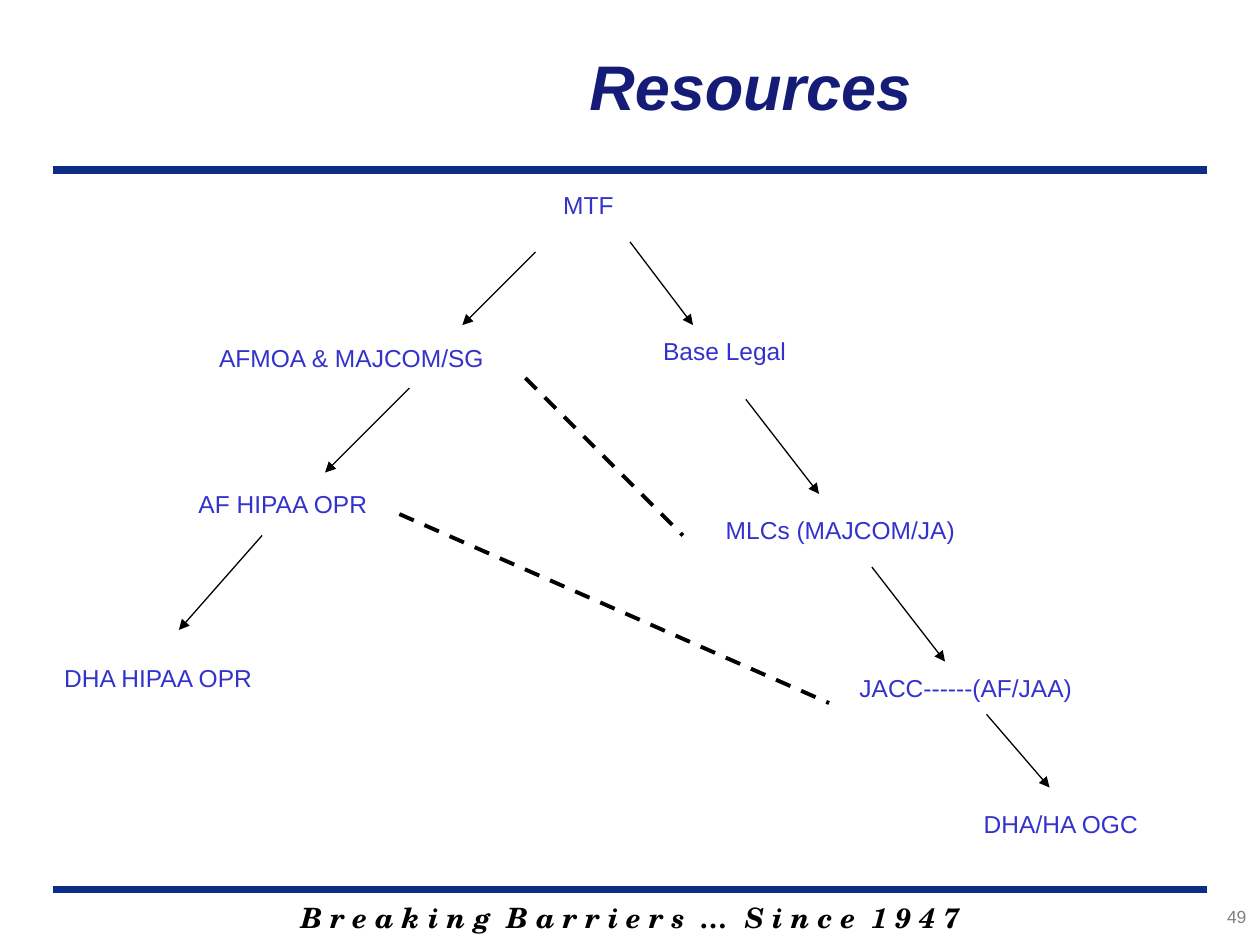
"""Build the Resources slide: a referral tree with two dashed cross links."""
from lxml.etree import SubElement as Sub
from pptx import Presentation
from pptx.dml.color import RGBColor as Rgb
from pptx.enum.dml import MSO_LINE_DASH_STYLE as Dash
from pptx.enum.shapes import MSO_CONNECTOR as Conn
from pptx.enum.text import MSO_ANCHOR as Anchor, PP_ALIGN as Align
from pptx.oxml.ns import qn
from pptx.util import Inches, Pt

COLORS = {"rule": "0C2D83", "title": "151C77", "node": "3333CC",
          "ink": "000000", "page": "808080"}
STYLES = {
    "title": {"name": "Arial", "size": Pt(36), "bold": True, "italic": True},
    "node": {"name": "Arial", "size": Pt(14)},
    "ink": {"name": "TeX Gyre Schola", "size": Pt(16), "bold": True, "italic": True},
    "page": {"name": "Arial", "size": Pt(10)},
}
MOTTO = "  ".join(" ".join(word) for word in "Breaking Barriers … Since 1947".split())
NODES = [
    ("MTF", 4.31, 1.46, 0.72, 0.4),
    ("AFMOA & MAJCOM/SG", 1.25, 2.67, 3.08, 0.4),
    ("Base Legal", 4.99, 2.62, 1.52, 0.4),
    ("MLCs (MAJCOM/JA)", 5.36, 4.04, 2.62, 0.4),
    ("AF HIPAA OPR", 1.25, 3.83, 1.99, 0.4),
    ("DHA HIPAA OPR", 0.38, 5.21, 1.75, 0.34),
    ("JACC------(AF/JAA)", 6.44, 5.29, 2.45, 0.4),
    ("DHA/HA OGC", 7.69, 6.37, 1.46, 0.34),
]
ARROWS = [
    (4.25, 2, 3.67, 2.58), (3.25, 3.08, 2.58, 3.75), (2.08, 4.25, 1.42, 5),
    (5, 1.92, 5.5, 2.58), (5.92, 3.17, 6.5, 3.92),
    (6.92, 4.5, 7.5, 5.25), (7.83, 5.67, 8.33, 6.25),
]
LINKS = [(4.17, 3, 5.42, 4.25), (3.17, 4.08, 6.58, 5.58)]


def add_text(slide, text, box, style, align=Align.CENTER, anchor=Anchor.TOP, wrap=True):
    """Add a one-line text box in a named style."""
    frame = slide.shapes.add_textbox(*map(Inches, box)).text_frame
    frame.word_wrap = wrap
    frame.vertical_anchor = anchor
    para = frame.paragraphs[0]
    para.alignment = align
    run = para.add_run()
    run.text = text
    for key, value in STYLES[style].items():
        setattr(run.font, key, value)
    run.font.color.rgb = Rgb.from_string(COLORS[style])


def add_line(slide, ends, width, color="ink", dash=None, arrow=False):
    """Add a straight line, dashed or with an arrowhead if asked."""
    shape = slide.shapes.add_connector(Conn.STRAIGHT, *map(Inches, ends))
    line = shape.line
    line.width = Pt(width)
    line.color.rgb = Rgb.from_string(COLORS[color])
    if dash:
        line.dash_style = dash
    if arrow:
        Sub(line._get_or_add_ln(), qn("a:tailEnd"), type="triangle")
    Sub(shape._element.spPr, qn("a:effectLst"))


def main():
    """Draw the frame, the tree and the links, then save."""
    deck = Presentation()
    deck.slide_width, deck.slide_height = Inches(10), Inches(7.5)
    slide = deck.slides.add_slide(deck.slide_layouts[6])
    add_text(slide, MOTTO, (1.42, 7.1, 7.17, 0.37), "ink")
    for y in (7.06, 1.35):
        add_line(slide, (0.42, y, 9.58, y), 4.5, "rule")
    add_text(slide, "Resources", (2.05, 0.05, 7.81, 1.25), "title", anchor=Anchor.MIDDLE)
    add_text(slide, "49", (8.74, 7.14, 1.25, 0.33), "page", Align.RIGHT)
    for ends in ARROWS:
        add_line(slide, ends, 0.75, arrow=True)
    for text, *box in NODES:
        add_text(slide, text, box, "node", wrap=False)
    for ends in LINKS:
        add_line(slide, ends, 2.25, dash=Dash.DASH)
    deck.save("out.pptx")


if __name__ == "__main__":
    main()
